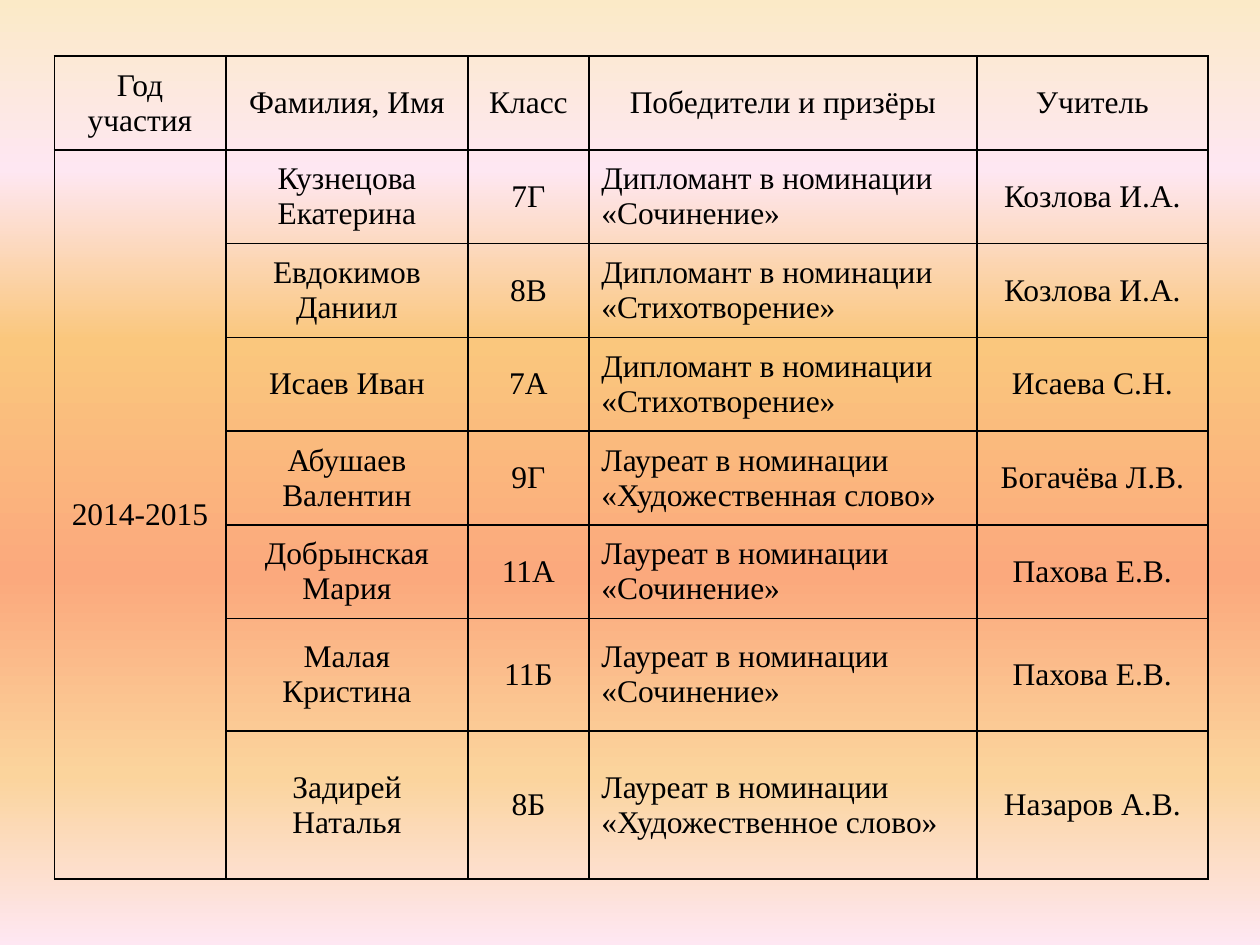
from typing import NamedTuple

from lxml.etree import SubElement
from pptx import Presentation
from pptx.dml.color import RGBColor
from pptx.enum.text import MSO_ANCHOR, PP_ALIGN
from pptx.oxml.ns import qn
from pptx.util import Pt

FONT = "Times New Roman"
BLACK = "000000"
YEARS = "2014-2015"
HEADINGS = ("Год участия", "Фамилия, Имя", "Класс", "Победители и призёры", "Учитель")
COLUMN_WIDTHS = (98, 138.5, 69, 221.8, 131.9)
ROW_HEIGHTS = (53.6,) * 6 + (64.2, 84.8)
AWARD_COLUMN = 3


class Stop(NamedTuple):
    percent: int
    colour: str


class Winner(NamedTuple):
    name: str
    grade: str
    award: str
    teacher: str


STOPS = (
    Stop(0, "FBEAC7"),
    Stop(18, "FEE7F2"),
    Stop(36, "FAC77D"),
    Stop(61, "FBA97D"),
    Stop(82, "FBD49C"),
    Stop(100, "FEE7F2"),
)
WINNERS = (
    Winner("Кузнецова Екатерина", "7Г", "Дипломант в номинации «Сочинение»", "Козлова И.А."),
    Winner("Евдокимов Даниил", "8В", "Дипломант в номинации «Стихотворение»", "Козлова И.А."),
    Winner("Исаев Иван", "7А", "Дипломант в номинации «Стихотворение»", "Исаева С.Н."),
    Winner("Абушаев Валентин", "9Г", "Лауреат в номинации «Художественная слово»", "Богачёва Л.В."),
    Winner("Добрынская Мария", "11А", "Лауреат в номинации «Сочинение»", "Пахова Е.В."),
    Winner("Малая Кристина", "11Б", "Лауреат в номинации «Сочинение»", "Пахова Е.В."),
    Winner("Задирей Наталья", "8Б", "Лауреат в номинации «Художественное слово»", "Назаров А.В."),
)


def colour(value: str) -> RGBColor:
    return RGBColor.from_string(value)


def paint_background(page, stops: tuple[Stop, ...]) -> None:
    """Fill the page with a gradient that runs from top to bottom."""
    page.background.fill.gradient()
    gradient = page.element.find(".//" + qn("a:gradFill"))
    for child in list(gradient):
        gradient.remove(child)
    stop_list = SubElement(gradient, qn("a:gsLst"))
    for stop in stops:
        mark = SubElement(stop_list, qn("a:gs"), pos=str(stop.percent * 1000))
        SubElement(mark, qn("a:srgbClr"), val=str(colour(stop.colour)))
    SubElement(gradient, qn("a:lin"), ang="5400000", scaled="0")


def draw_borders(cell, width: float, value: str) -> None:
    properties = cell._tc.get_or_add_tcPr()
    for side in ("lnL", "lnR", "lnT", "lnB"):
        line = SubElement(properties, qn(f"a:{side}"), w=str(Pt(width)))
        fill = SubElement(line, qn("a:solidFill"))
        SubElement(fill, qn("a:srgbClr"), val=str(colour(value)))


def write_cell(cell, text: str, align: PP_ALIGN) -> None:
    para = cell.text_frame.paragraphs[0]
    para.alignment = align
    span = para.add_run()
    span.text = text
    span.font.name = FONT
    span.font.size = Pt(18)
    span.font.color.rgb = colour(BLACK)


def add_winners_table(page, left: float, top: float) -> None:
    rows = [HEADINGS] + [
        (YEARS if index == 0 else "", *winner) for index, winner in enumerate(WINNERS)
    ]
    frame = page.shapes.add_table(
        len(rows), len(HEADINGS), Pt(left), Pt(top),
        Pt(sum(COLUMN_WIDTHS)), Pt(sum(ROW_HEIGHTS)),
    )
    table = frame.table
    table.first_row = False
    table.horz_banding = False
    for column, width in zip(table.columns, COLUMN_WIDTHS):
        column.width = Pt(width)
    for row, height in zip(table.rows, ROW_HEIGHTS):
        row.height = Pt(height)

    # One year cell spans all the winners
    table.cell(1, 0).merge(table.cell(len(WINNERS), 0))

    for row_index, texts in enumerate(rows):
        for column_index, text in enumerate(texts):
            cell = table.cell(row_index, column_index)
            draw_borders(cell, 1, BLACK)
            cell.fill.background()
            cell.vertical_anchor = MSO_ANCHOR.MIDDLE
            is_award = row_index > 0 and column_index == AWARD_COLUMN
            if text:
                write_cell(cell, text, PP_ALIGN.LEFT if is_award else PP_ALIGN.CENTER)


def main() -> None:
    deck = Presentation()
    deck.slide_width, deck.slide_height = Pt(720), Pt(540)
    page = deck.slides.add_slide(deck.slide_layouts[6])
    paint_background(page, STOPS)
    add_winners_table(page, left=31, top=32)
    deck.save("out.pptx")


if __name__ == "__main__":
    main()
